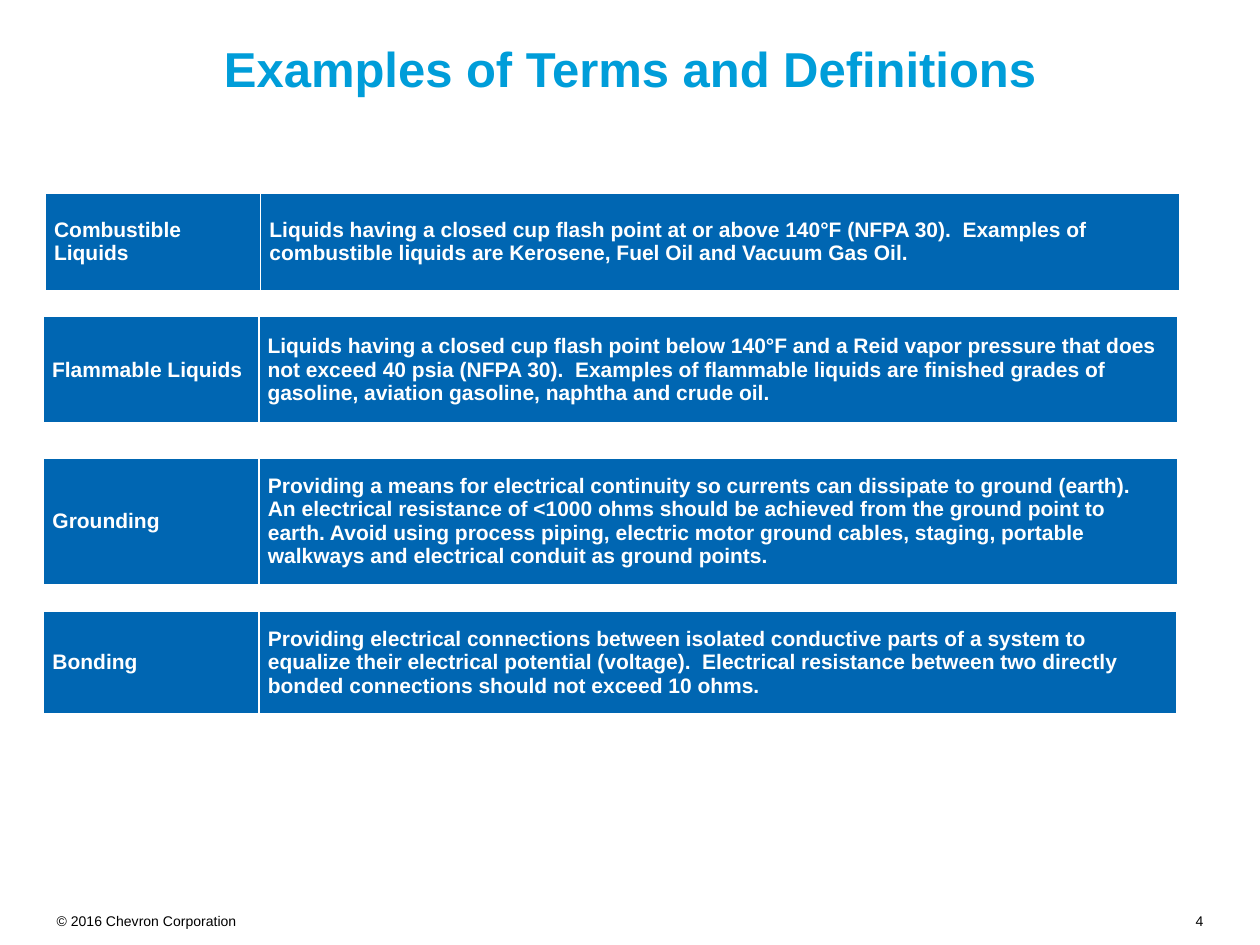
from dataclasses import dataclass

from pptx import Presentation
from pptx.dml.color import RGBColor
from pptx.enum.text import MSO_ANCHOR, PP_ALIGN
from pptx.oxml import parse_xml
from pptx.oxml.ns import nsdecls
from pptx.util import Pt


@dataclass(frozen=True)
class Theme:
    """Colours, font and type sizes of the deck."""
    font: str = "Arial"
    heading: str = "009DD9"
    panel: str = "0066B2"
    light: str = "FFFFFF"
    dark: str = "000000"
    title_size: int = 28
    body_size: int = 12
    footer_size: int = 8


TERM_WIDTH = 123.1
BORDERS = {"lnL": 1, "lnR": 1, "lnT": 3, "lnB": 3}
DEFINITIONS = [
    (25.9, 109.4, 524.9, 57.6, "Combustible Liquids",
     "Liquids having a closed cup flash point at or above 140°F (NFPA 30).  "
     "Examples of combustible liquids are Kerosene, Fuel Oil and Vacuum Gas Oil."),
    (24.8, 180, 524.9, 62.6, "Flammable Liquids",
     "Liquids having a closed cup flash point below 140°F and a Reid vapor pressure "
     "that does not exceed 40 psia (NFPA 30).  Examples of flammable liquids are "
     "finished grades of gasoline, aviation gasoline, naphtha and crude oil."),
    (25, 260.8, 524.9, 74.2, "Grounding",
     "Providing a means for electrical continuity so currents can dissipate to ground "
     "(earth).  An electrical resistance of <1000 ohms should be achieved from the "
     "ground point to earth. Avoid using process piping, electric motor ground cables, "
     "staging, portable walkways and electrical conduit as ground points."),
    (25, 348.3, 524.2, 60.5, "Bonding",
     "Providing electrical connections between isolated conductive parts of a system "
     "to equalize their electrical potential (voltage).  Electrical resistance between "
     "two directly bonded connections should not exceed 10 ohms."),
]


def apply(target, values):
    """Set each attribute of the target from a dict."""
    for name, value in values.items():
        setattr(target, name, value)


def margins(horizontal, vertical):
    """Return inner margins in points as format values."""
    return {"margin_left": Pt(horizontal), "margin_right": Pt(horizontal),
            "margin_top": Pt(vertical), "margin_bottom": Pt(vertical)}


class SlideBuilder:
    """Holds the theme and the current slide and adds its elements."""

    def __init__(self, page, theme):
        """Keep the page and the theme."""
        self.page = page
        self.theme = theme

    def add_text(self, frame, text, size, color, bold=False, align=PP_ALIGN.LEFT):
        """Fill a text frame with one formatted paragraph."""
        para = frame.paragraphs[0]
        para.alignment = align
        span = para.add_run()
        span.text = text
        apply(span.font, {"name": self.theme.font, "size": Pt(size), "bold": bold})
        span.font.color.rgb = RGBColor.from_string(color)

    def title(self, text, left, top, width, height):
        """Place and format the title placeholder."""
        box = self.page.shapes.title
        apply(box, {"left": Pt(left), "top": Pt(top),
                    "width": Pt(width), "height": Pt(height)})
        apply(box.text_frame, {**margins(0, 3.6), "word_wrap": True,
                               "vertical_anchor": MSO_ANCHOR.MIDDLE})
        self.add_text(box.text_frame, text, self.theme.title_size,
                      self.theme.heading, True, PP_ALIGN.CENTER)

    def footer(self, text, left, top, width, height, align, wrap):
        """Add a small line of text at the foot of the slide."""
        box = self.page.shapes.add_textbox(Pt(left), Pt(top), Pt(width), Pt(height))
        apply(box.text_frame, {**margins(0, 0), "word_wrap": wrap})
        self.add_text(box.text_frame, text, self.theme.footer_size,
                      self.theme.dark, align=align)

    def definition(self, left, top, width, height, term, meaning):
        """Add a one-row table with a term and its meaning."""
        widths = (TERM_WIDTH, width)
        table = self.page.shapes.add_table(
            1, 2, Pt(left), Pt(top), Pt(sum(widths)), Pt(height)).table
        apply(table, {"first_row": False, "horz_banding": False})
        for column, column_width in zip(table.columns, widths):
            column.width = Pt(column_width)
        for cell, text in zip(table.rows[0].cells, (term, meaning)):
            apply(cell, {**margins(5, 0), "vertical_anchor": MSO_ANCHOR.MIDDLE})
            cell.fill.solid()
            cell.fill.fore_color.rgb = RGBColor.from_string(self.theme.panel)
            self.borders(cell)
            self.add_text(cell.text_frame, text, self.theme.body_size,
                          self.theme.light, True)

    def borders(self, cell):
        """Draw the light borders of a table cell."""
        properties = cell._tc.get_or_add_tcPr()
        for index, (side, weight) in enumerate(BORDERS.items()):
            properties.insert(index, parse_xml(
                f'<a:{side} {nsdecls("a")} w="{Pt(weight)}"><a:solidFill>'
                f'<a:srgbClr val="{self.theme.light}"/></a:solidFill></a:{side}>'))


def main():
    """Build the slide and save the deck."""
    deck = Presentation()
    apply(deck, {"slide_width": Pt(720), "slide_height": Pt(540)})
    page = deck.slides.add_slide(deck.slide_layouts[5])
    builder = SlideBuilder(page, Theme())
    builder.title("Examples of Terms and Definitions", 32.4, 18.7, 655.2, 40.3)
    for definition in DEFINITIONS:
        builder.definition(*definition)
    builder.footer("© 2016 Chevron Corporation", 32.4, 521.3, 103.7, 9.4,
                   PP_ALIGN.LEFT, False)
    builder.footer("4", 624.2, 521.3, 63.4, 9.4, PP_ALIGN.RIGHT, True)
    deck.save("out.pptx")


if __name__ == "__main__":
    main()
